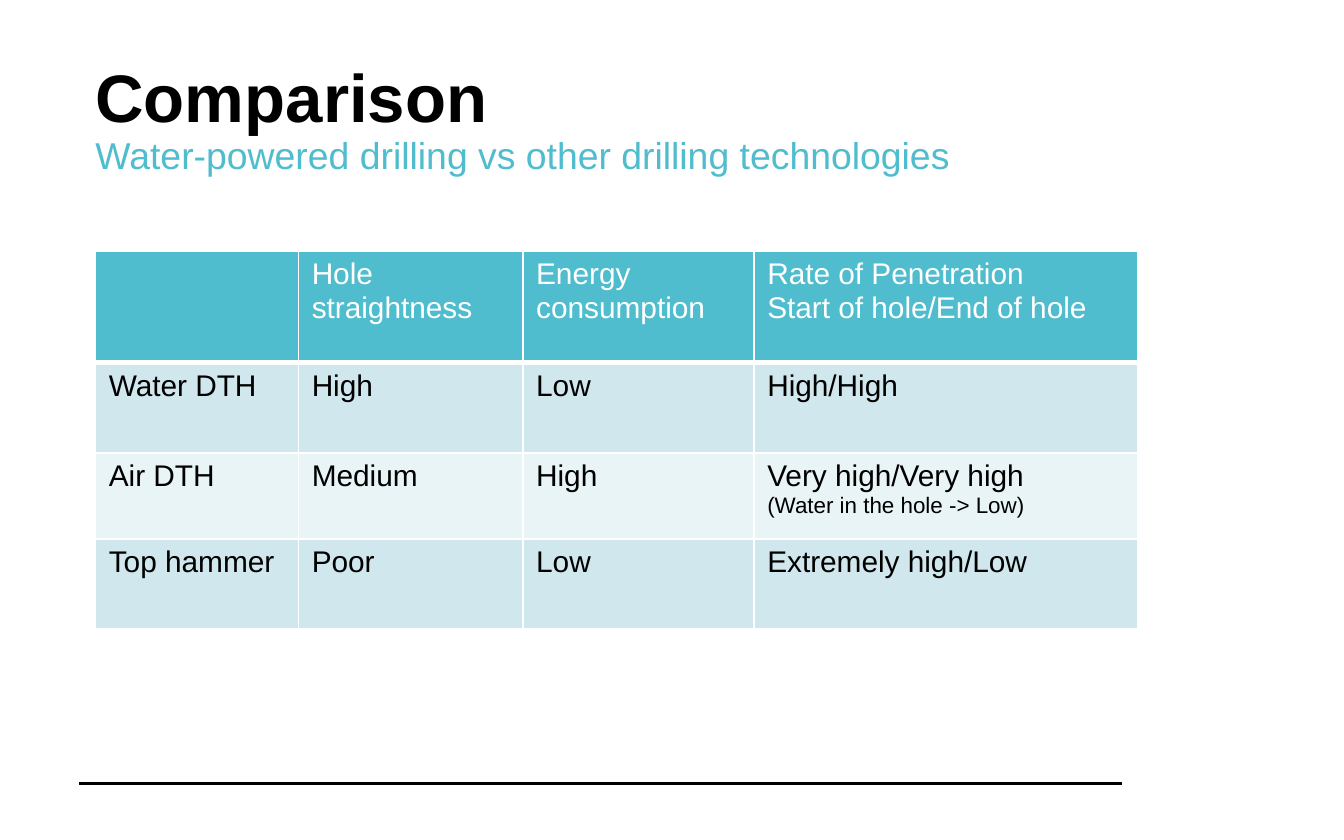
from lxml.etree import SubElement
from pptx import Presentation
from pptx.dml.color import RGBColor
from pptx.enum.shapes import MSO_CONNECTOR as Connector
from pptx.enum.text import MSO_ANCHOR as Anchor
from pptx.oxml.ns import qn
from pptx.util import Inches, Pt

BLACK = RGBColor(0x00, 0x00, 0x00)
WHITE = RGBColor(0xFF, 0xFF, 0xFF)
TEAL = RGBColor(0x4F, 0xBD, 0xCD)
BAND_DARK = RGBColor(0xD0, 0xE8, 0xED)
BAND_LIGHT = RGBColor(0xE9, 0xF4, 0xF6)

LEFT = Inches(0.71)
TEXT_WIDTH = Inches(8.58)
COLUMNS = [Inches(width) for width in (1.51, 1.67, 1.72, 2.86)]
ROWS = [Inches(height) for height in (0.83, 0.67, 0.64, 0.67)]


def write(frame, text, sizes=(16,), color=BLACK, bold=False):
    """Fill a frame, one paragraph a line; the last size serves the rest."""
    frame.text = text
    for index, paragraph in enumerate(frame.paragraphs):
        for run in paragraph.runs:
            run.font.name = "Arial"
            run.font.size = Pt(sizes[min(index, len(sizes) - 1)])
            run.font.color.rgb = color
            run.font.bold = bold


def draw_borders(cell, **widths):
    """Add white borders; they must stand before the fill in the cell."""
    properties = cell._tc.get_or_add_tcPr()
    for side, width in widths.items():
        border = SubElement(properties, qn(f"a:{side}"), w=str(Pt(width)))
        fill = SubElement(border, qn("a:solidFill"))
        SubElement(fill, qn("a:srgbClr"), val=str(WHITE))


presentation = Presentation()
presentation.slide_width = Inches(10)
presentation.slide_height = Inches(6.25)
slide = presentation.slides.add_slide(presentation.slide_layouts[6])

# Footer rule
rule = slide.shapes.add_connector(
    Connector.STRAIGHT, Inches(0.59), Inches(5.83), Inches(8.35), Inches(5.83))
rule.line.color.rgb = BLACK
rule.line.width = Pt(2)
SubElement(rule._element.spPr, qn("a:effectLst"))

# Title and subtitle
headings = [
    ("Comparison", 0.4, 0.61, Anchor.BOTTOM,
     dict(sizes=(36,), bold=True)),
    ("Water-powered drilling vs other drilling technologies", 0.98, 0.48,
     Anchor.TOP, dict(sizes=(20,), color=TEAL)),
]
for text, top, height, anchor, style in headings:
    box = slide.shapes.add_textbox(LEFT, Inches(top), TEXT_WIDTH, Inches(height))
    frame = box.text_frame
    frame.word_wrap = True
    frame.vertical_anchor = anchor
    frame.margin_left = frame.margin_right = 0
    frame.margin_top = frame.margin_bottom = 0
    write(frame, text, **style)

# Comparison table
content = [
    ["", "Hole\vstraightness", "Energy consumption",
     "Rate of Penetration\nStart of hole/End of hole"],
    ["Water DTH", "High", "Low", "High/High"],
    ["Air DTH", "Medium", "High",
     "Very high/Very high\n(Water in the hole -> Low)"],
    ["Top hammer", "Poor", "Low", "Extremely high/Low"],
]
table = slide.shapes.add_table(
    len(ROWS), len(COLUMNS), LEFT, Inches(1.87), sum(COLUMNS), sum(ROWS)).table
for column, width in zip(table.columns, COLUMNS):
    column.width = width
for row, height in zip(table.rows, ROWS):
    row.height = height

for row_index, texts in enumerate(content):
    header = row_index == 0
    band = BAND_DARK if row_index % 2 else BAND_LIGHT
    for column_index, text in enumerate(texts):
        cell = table.cell(row_index, column_index)
        draw_borders(cell, lnL=1, lnR=1, lnT=1, lnB=3 if header else 1)
        cell.fill.solid()
        cell.fill.fore_color.rgb = TEAL if header else band
        write(cell.text_frame, text, sizes=(16,) if header else (16, 12),
              color=WHITE if header else BLACK)

presentation.save("out.pptx")
